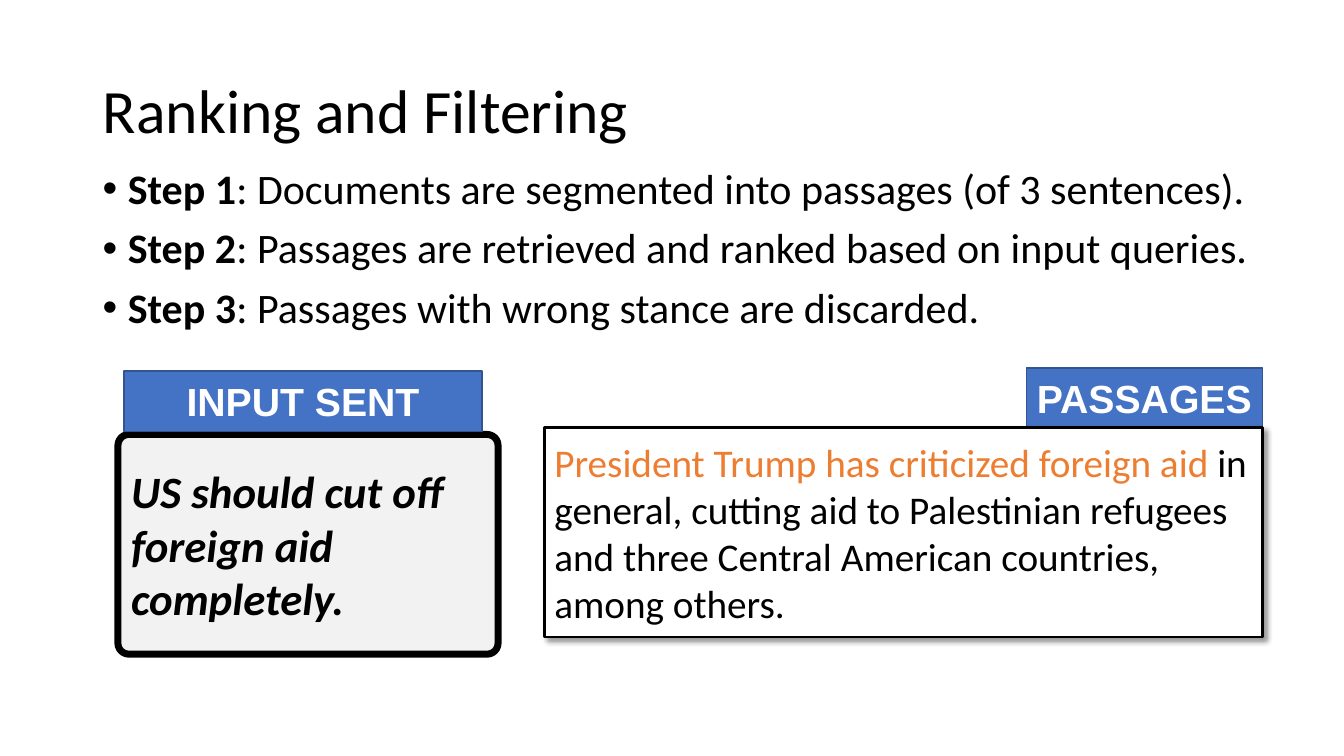
from dataclasses import dataclass

import pptx
import pptx.dml.color
import pptx.enum.shapes
import pptx.enum.text
import pptx.oxml
import pptx.oxml.ns
import pptx.util
from pptx.util import Inches

ALIGN = pptx.enum.text.PP_ALIGN
ANCHOR = pptx.enum.text.MSO_ANCHOR
SHAPE = pptx.enum.shapes.MSO_SHAPE


@dataclass(frozen=True)
class Theme:
    black: str = "000000"
    white: str = "FFFFFF"
    gray: str = "F2F2F2"
    blue: str = "4472C4"
    dark_blue: str = "325491"
    orange: str = "ED7D31"
    body_font: str = "Calibri"
    label_font: str = "Arial"
    title_size: int = 44
    step_size: int = 30
    claim_size: int = 32
    box_size: int = 28


THEME = Theme()
STEPS = [
    "Documents are segmented into passages (of 3 sentences).",
    "Passages are retrieved and ranked based on input queries.",
    "Passages with wrong stance are discarded.",
]


def rgb(color):
    return pptx.dml.color.RGBColor.from_string(color)


def apply(target, formats):
    for name, value in formats.items():
        setattr(target, name, value)


def place(shape, left, top, width, height):
    apply(shape, {"left": Inches(left), "top": Inches(top),
                  "width": Inches(width), "height": Inches(height)})


def set_frame(shape, anchor):
    apply(shape.text_frame, {"word_wrap": True, "vertical_anchor": anchor,
                             "auto_size": pptx.enum.text.MSO_AUTO_SIZE.NONE})


def add_run(paragraph, text, size, color=THEME.black, font=THEME.body_font,
            bold=False, italic=False):
    run = paragraph.add_run()
    run.text = text
    apply(run.font, {"name": font, "size": pptx.util.Pt(size),
                     "bold": bold, "italic": italic})
    run.font.color.rgb = rgb(color)


def add_title(slide, text):
    title = slide.shapes.title
    place(title, 0.92, 0.4, 11.5, 1.45)
    set_frame(title, ANCHOR.MIDDLE)
    paragraph = title.text_frame.paragraphs[0]
    apply(paragraph, {"alignment": ALIGN.LEFT, "line_spacing": 0.9})
    add_run(paragraph, text, THEME.title_size)


def add_bullet(paragraph):
    properties = paragraph._p.get_or_add_pPr()
    properties.set("marL", str(Inches(0.25)))
    properties.set("indent", str(Inches(-0.25)))
    namespace = pptx.oxml.ns.nsdecls("a")
    for xml in (f'<a:buFont {namespace} typeface="Arial"/>',
                f'<a:buChar {namespace} char="•"/>'):
        properties.append(pptx.oxml.parse_xml(xml))


def add_steps(slide, steps):
    box = slide.shapes.add_textbox(Inches(0.92), Inches(1.62), Inches(12.41), Inches(1.9))
    set_frame(box, ANCHOR.TOP)
    frame = box.text_frame
    for number, step in enumerate(steps, 1):
        paragraph = frame.paragraphs[0] if number == 1 else frame.add_paragraph()
        apply(paragraph, {"line_spacing": 0.9, "space_before": pptx.util.Pt(10)})
        add_bullet(paragraph)
        add_run(paragraph, f"Step {number}", THEME.step_size, bold=True)
        add_run(paragraph, f": {step}", THEME.step_size)


def add_box(slide, kind, bounds, fill, line, line_width, alignment=ALIGN.LEFT):
    """Add a filled, outlined box and return it with its empty paragraph."""
    box = slide.shapes.add_shape(kind, *map(Inches, bounds))
    box.shadow.inherit = False
    box.fill.solid()
    box.fill.fore_color.rgb = rgb(fill)
    box.line.color.rgb = rgb(line)
    box.line.width = pptx.util.Pt(line_width)
    set_frame(box, ANCHOR.MIDDLE)
    paragraph = box.text_frame.paragraphs[0]
    paragraph.alignment = alignment
    return box, paragraph


def add_label(slide, text, left, top, width):
    _, paragraph = add_box(slide, SHAPE.RECTANGLE, (left, top, width, 0.6),
                           THEME.blue, THEME.dark_blue, 1, ALIGN.CENTER)
    add_run(paragraph, text, THEME.box_size, THEME.white, THEME.label_font, bold=True)


def add_claim(slide, text):
    box, paragraph = add_box(slide, SHAPE.ROUNDED_RECTANGLE, (1.17, 4.31, 3.77, 2.18),
                             THEME.gray, THEME.black, 5)
    box.adjustments[0] = 0.05
    add_run(paragraph, text, THEME.claim_size, bold=True, italic=True)


def add_drop_shadow(shape):
    effects = shape._element.spPr.find(pptx.oxml.ns.qn("a:effectLst"))
    effects.append(pptx.oxml.parse_xml(
        f'<a:outerShdw {pptx.oxml.ns.nsdecls("a")} blurRad="{pptx.util.Pt(4)}" '
        f'dist="{pptx.util.Pt(3)}" dir="2700000" algn="tl" rotWithShape="0">'
        f'<a:srgbClr val="{THEME.black}"><a:alpha val="40000"/></a:srgbClr>'
        '</a:outerShdw>'))


def add_passage(slide, highlight, rest):
    box, paragraph = add_box(slide, SHAPE.RECTANGLE, (5.4, 4.24, 7.12, 2.08),
                             THEME.white, THEME.black, 2)
    add_drop_shadow(box)
    add_run(paragraph, highlight, THEME.box_size, THEME.orange)
    add_run(paragraph, rest, THEME.box_size)


def main():
    presentation = pptx.Presentation()
    apply(presentation, {"slide_width": Inches(13.33), "slide_height": Inches(7.5)})
    slide = presentation.slides.add_slide(
        presentation.slide_layouts.get_by_name("Title Only"))
    add_title(slide, "Ranking and Filtering")
    add_steps(slide, STEPS)
    add_claim(slide, "US should cut off foreign aid completely.")
    add_label(slide, "PASSAGES", 10.18, 3.65, 2.34)
    add_label(slide, "INPUT SENT", 1.23, 3.68, 3.55)
    add_passage(slide, "President Trump has criticized foreign aid ",
                "in general, cutting aid to Palestinian refugees and three "
                "Central American countries, among others.")
    presentation.save("out.pptx")


if __name__ == "__main__":
    main()
